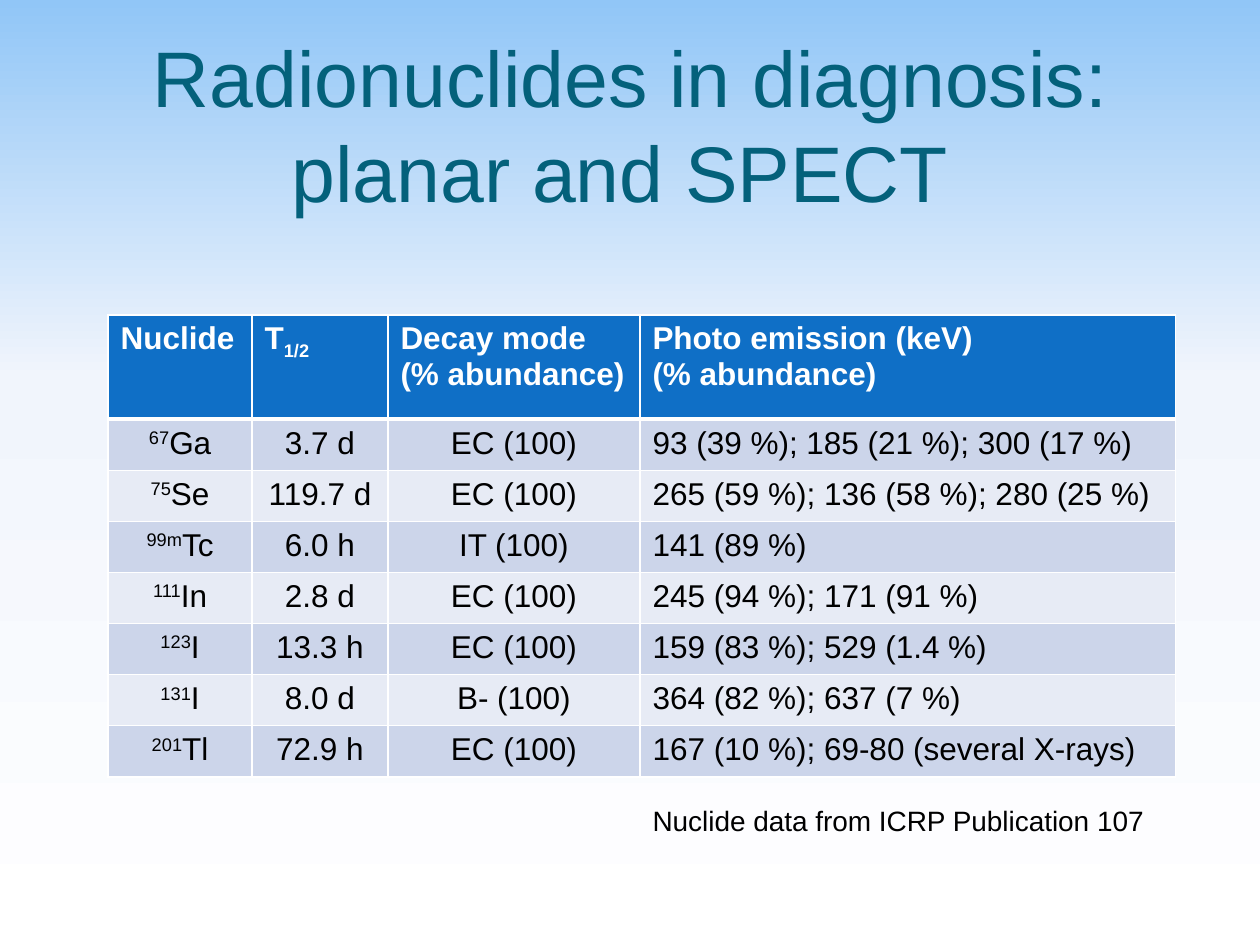
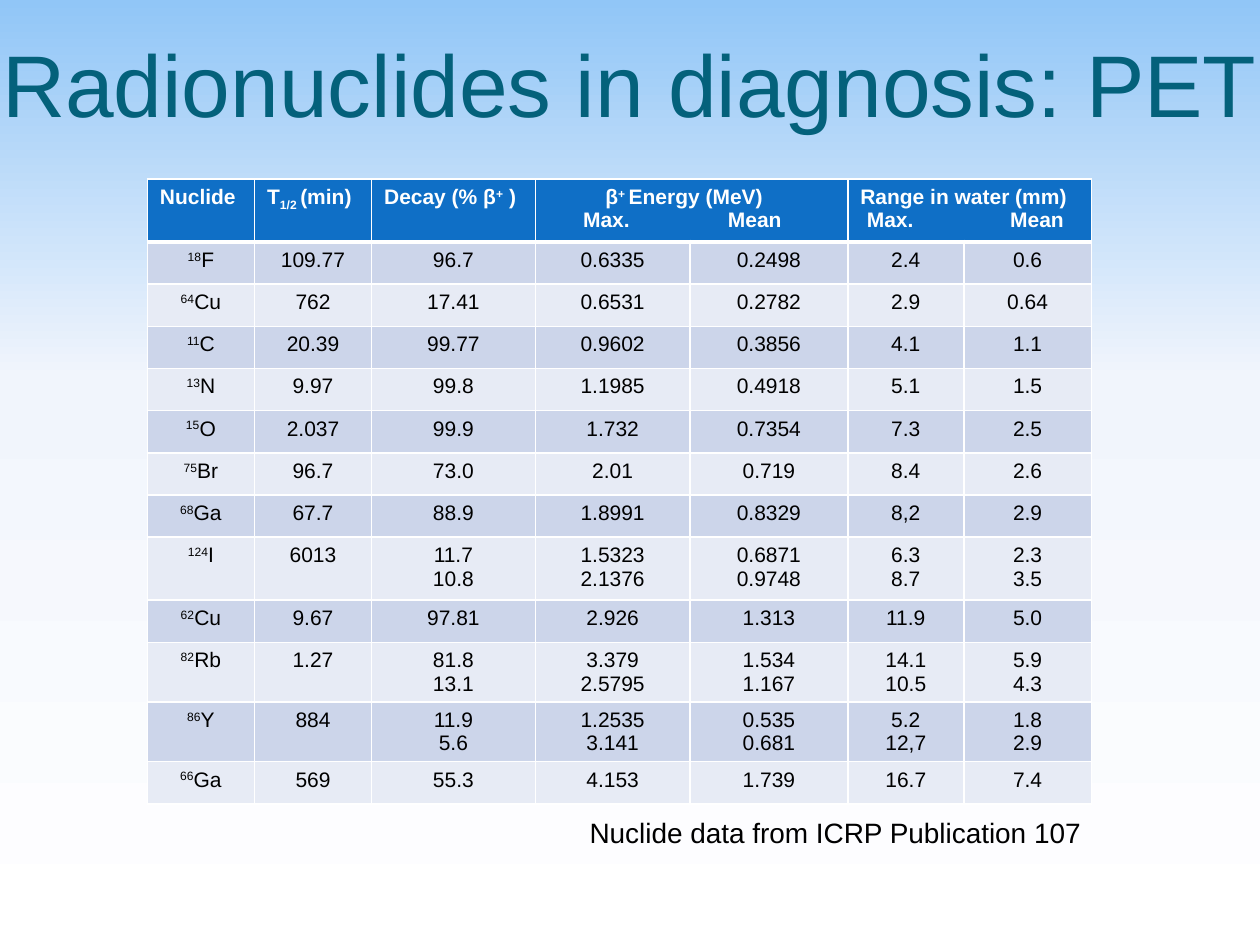
"""Build two slides of nuclide tables for diagnosis."""
from copy import deepcopy
from dataclasses import dataclass, field

from lxml.etree import SubElement
from pptx import Presentation
from pptx.dml.color import RGBColor
from pptx.enum.text import MSO_ANCHOR, MSO_AUTO_SIZE, PP_ALIGN
from pptx.oxml.ns import qn
from pptx.util import Cm, Pt

FONT = "Arial"
HEX = {
    "sky": "91C6F7", "mist": "F1F5FC", "white": "FFFFFF", "teal": "04617B",
    "blue": "0F6FC6", "dark": "CCD5EA", "light": "E7EBF5", "black": "000000",
}
STOPS = ((0, "sky"), (0.4, "mist"), (1, "white"))
BASE = {"^": "30000", "_": "-25000"}
SOURCE = "Nuclide data from ICRP Publication 107"


@dataclass
class Box:
    left: float
    top: float
    width: float
    height: float


@dataclass
class Grid:
    left: float
    top: float
    size: int
    cols: list[float]
    rows: list[float]
    cells: list[list[str]]
    flush: tuple[int, ...] = ()
    spans: tuple[tuple[int, int], ...] = ()
    tabs: dict[tuple[int, int], tuple[float, ...]] = field(default_factory=dict)


@dataclass
class Page:
    title: str
    size: int
    head: Box
    grid: Grid
    note: Box


SPECT = Grid(
    2.18, 6.35, 18, [2.9, 2.74, 5.08, 10.8], [2.1] + [1.03] * 7,
    [
        ["Nuclide", "T|_1/2", "Decay mode\n(% abundance)",
         "Photo emission (keV)\n(% abundance)"],
        ["^67|Ga", "3.7 d", "EC (100)", "93 (39 %); 185 (21 %); 300 (17 %)"],
        ["^75|Se", "119.7 d", "EC (100)", "265 (59 %); 136 (58 %); 280 (25 %)"],
        ["^99m|Tc", "6.0 h", "IT (100)", "141 (89 %)"],
        ["^111|In", "2.8 d", "EC (100)", "245 (94 %); 171 (91 %)"],
        ["^123|I", "13.3 h", "EC (100)", "159 (83 %); 529 (1.4 %)"],
        ["^131|I", "8.0 d", "B- (100)", "364 (82 %); 637 (7 %)"],
        ["^201|Tl", "72.9 h", "EC (100)", "167 (10 %); 69-80 (several X-rays)"],
    ],
    flush=(3,),
)
PET = Grid(
    2.97, 3.61, 12, [2.16, 2.36, 3.3, 3.12, 3.18, 2.34, 2.57],
    [1.27] + [0.85] * 7 + [1.27, 0.85, 1.2, 1.2, 0.85],
    [
        ["Nuclide", "T|_1/2 |(min)", "Decay (% β|^+| )",
         "\tβ|^+ |Energy (MeV)\n\tMax.\tMean", "",
         "Range in water (mm)\n\tMax.\tMean", ""],
        ["^18|F", "109.77", "96.7", "0.6335", "0.2498", "2.4", "0.6"],
        ["^64|Cu", "762", "17.41", "0.6531", "0.2782", "2.9", "0.64"],
        ["^11|C", "20.39", "99.77", "0.9602", "0.3856", "4.1", "1.1"],
        ["^13|N", "9.97", "99.8", "1.1985", "0.4918", "5.1", "1.5"],
        ["^15|O", "2.037", "99.9", "1.732", "0.7354", "7.3", "2.5"],
        ["^75|Br", "96.7", "73.0", "2.01", "0.719", "8.4", "2.6"],
        ["^68|Ga", "67.7", "88.9", "1.8991", "0.8329", "8,2", "2.9"],
        ["^124|I", "6013", "11.7\n10.8", "1.5323\n2.1376", "0.6871\n0.9748",
         "6.3\n8.7", "2.3\n3.5"],
        ["^62|Cu", "9.67", "97.81", "2.926", "1.313", "11.9", "5.0"],
        ["^82|Rb", "1.27", "81.8\n13.1", "3.379\n2.5795", "1.534\n1.167",
         "14.1\n10.5", "5.9\n4.3"],
        ["^86|Y", "884", "11.9\n5.6", "1.2535\n3.141", "0.535\n0.681",
         "5.2\n12,7", "1.8\n2.9"],
        ["^66|Ga", "569", "55.3", "4.153", "1.739", "16.7", "7.4"],
    ],
    spans=((3, 4), (5, 6)),
    tabs={(3, 0): (1.16,), (3, 1): (0.71, 3.63), (5, 1): (0.13, 3.02)},
)
PAGES = (
    Page("Radionuclides in diagnosis: planar and SPECT ", 45,
         Box(1.27, 0.84, 22.86, 3.18), SPECT, Box(12.9, 16.08, 10.74, 1.07)),
    Page("Radionuclides in diagnosis: PET", 50,
         Box(0, 0, 25.4, 3.18), PET, Box(11.63, 16.31, 10.74, 1.07)),
)


def color(name: str) -> RGBColor:
    return RGBColor.from_string(HEX[name])


def style(font, size: int, tint: str, bold: bool = False) -> None:
    font.name, font.size, font.bold = FONT, Pt(size), bold
    font.color.rgb = color(tint)


def shade(master) -> None:
    fill = master.background.fill
    fill.gradient()
    fill.gradient_angle = 270
    stops = master.element.find(".//" + qn("a:gsLst"))
    stops.append(deepcopy(stops[-1]))
    for stop, (place, tint) in zip(fill.gradient_stops, STOPS):
        stop.position = place
        stop.color.rgb = color(tint)


def place(shape, box: Box, text: str, size: int, tint: str):
    shape.left, shape.top = Cm(box.left), Cm(box.top)
    shape.width, shape.height = Cm(box.width), Cm(box.height)
    frame = shape.text_frame
    frame.text = text
    frame.word_wrap = True
    frame.auto_size = MSO_AUTO_SIZE.NONE
    style(frame.paragraphs[0].runs[0].font, size, tint)
    return frame


def border(cell, row: int) -> None:
    props = cell._tc.get_or_add_tcPr()
    widths = {"L": 1, "R": 1, "T": 3 if row == 1 else 1, "B": 1 if row else 3}
    for spot, (side, width) in enumerate(widths.items()):
        line = SubElement(props, qn(f"a:ln{side}"), w=str(Pt(width)))
        fill = SubElement(line, qn("a:solidFill"))
        SubElement(fill, qn("a:srgbClr"), val=HEX["white"])
        props.insert(spot, line)


def write(cell, text: str, grid: Grid, row: int, col: int) -> None:
    cell.text_frame.text = text
    for index, para in enumerate(cell.text_frame.paragraphs):
        parts = para.text.split("|")
        para.clear()
        if row == 0 and (col, index) in grid.tabs:
            stops = SubElement(para._p.get_or_add_pPr(), qn("a:tabLst"))
            for stop in grid.tabs[col, index]:
                SubElement(stops, qn("a:tab"), pos=str(Cm(stop)), algn="l")
        left = row == 0 or col in grid.flush
        para.alignment = PP_ALIGN.LEFT if left else PP_ALIGN.CENTER
        for part in parts:
            run = para.add_run()
            run.text = part.lstrip("^_")
            style(run.font, grid.size, "black" if row else "white", row == 0)
            if part[0] in BASE:
                run._r.get_or_add_rPr().set("baseline", BASE[part[0]])


def draw(slide, grid: Grid) -> None:
    table = slide.shapes.add_table(
        len(grid.rows), len(grid.cols), Cm(grid.left), Cm(grid.top),
        Cm(sum(grid.cols)), Cm(sum(grid.rows))).table
    for item, width in zip(table.columns, grid.cols):
        item.width = Cm(width)
    for item, height in zip(table.rows, grid.rows):
        item.height = Cm(height)
    for first, last in grid.spans:
        table.cell(0, first).merge(table.cell(0, last))
    for row, texts in enumerate(grid.cells):
        tint = ("light", "dark")[row % 2] if row else "blue"
        for col, text in enumerate(texts):
            cell = table.cell(row, col)
            cell.fill.solid()
            cell.fill.fore_color.rgb = color(tint)
            border(cell, row)
            if text:
                write(cell, text, grid, row, col)


def build(deck, page: Page) -> None:
    slide = deck.slides.add_slide(deck.slide_layouts[1])
    head = place(slide.shapes.title, page.head, page.title, page.size, "teal")
    head.vertical_anchor = MSO_ANCHOR.MIDDLE
    head.margin_left = head.margin_right = head.margin_bottom = 0
    head.margin_top = Cm(0.13)
    head.paragraphs[0].alignment = PP_ALIGN.CENTER
    draw(slide, page.grid)
    note = place(slide.placeholders[1], page.note, SOURCE, 16, "black")
    para = note.paragraphs[0]
    para.space_before = Pt(0)
    props = para._p.get_or_add_pPr()
    props.set("marL", "0")
    props.set("indent", "0")
    SubElement(props, qn("a:buNone"))


def main() -> None:
    deck = Presentation()
    deck.slide_width, deck.slide_height = Cm(25.4), Cm(19.05)
    shade(deck.slide_master)
    for page in PAGES:
        build(deck, page)
    deck.save("out.pptx")


if __name__ == "__main__":
    main()
